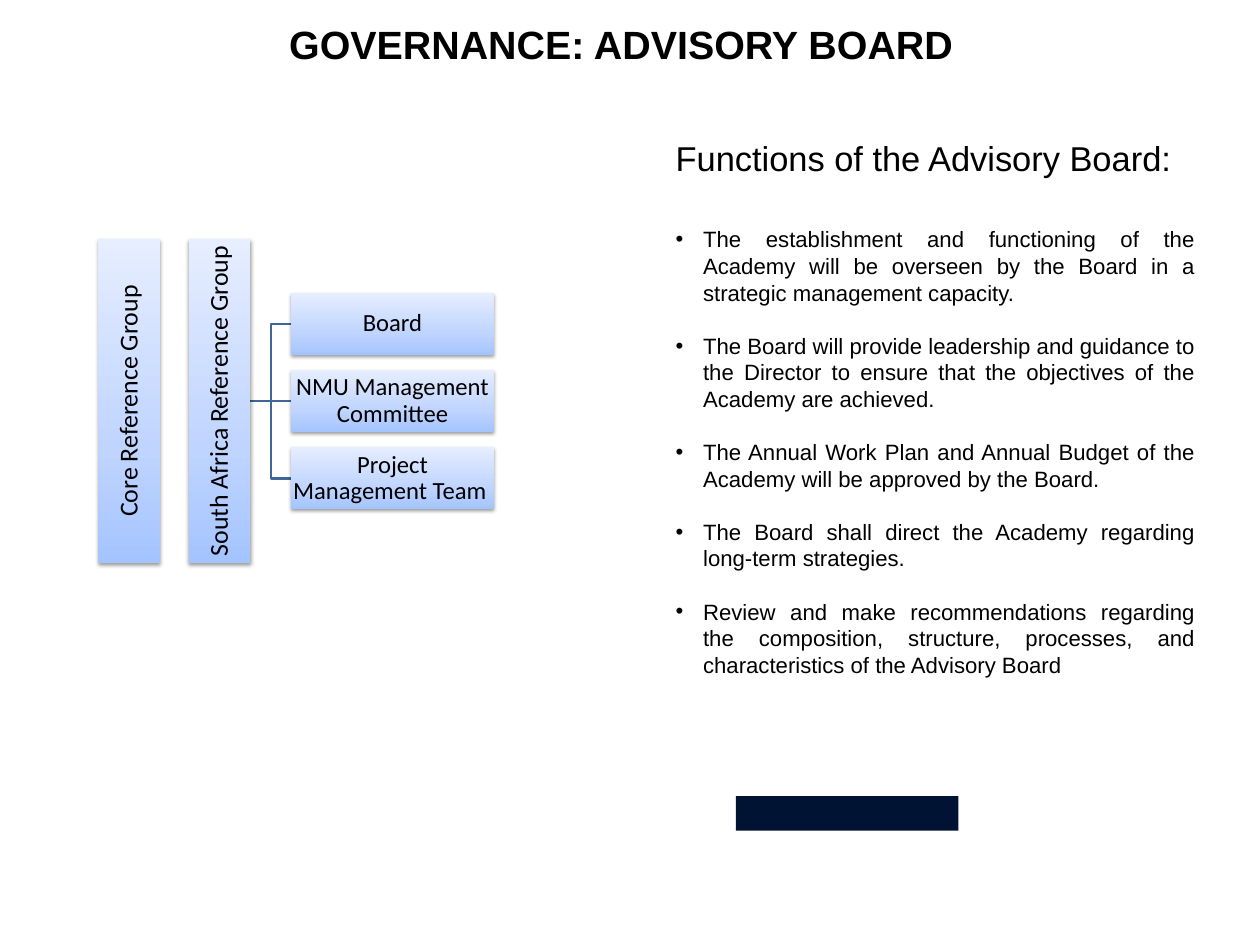
import pptx
import pptx.dml.color
import pptx.enum.shapes
import pptx.enum.text
import pptx.oxml
import pptx.oxml.ns
import pptx.util

Pt = pptx.util.Pt
ALIGN = pptx.enum.text.PP_ALIGN
ANCHOR = pptx.enum.text.MSO_ANCHOR
SHAPE = pptx.enum.shapes.MSO_SHAPE
CONNECTOR = pptx.enum.shapes.MSO_CONNECTOR
DRAWING_NS = pptx.oxml.ns.nsdecls("a")
LEADING = 1.2  # line height as a multiple of the font size

REFERENCE_GROUPS = ["Core Reference Group", "South Africa Reference Group"]
BODIES = ["Board", "NMU Management Committee", "Project Management Team "]
FUNCTIONS = [
    "The establishment and functioning of the Academy will be overseen by the Board in a "
    "strategic management capacity.",
    "The Board will provide leadership and guidance to the Director to ensure that the "
    "objectives of the Academy are achieved.",
    "The Annual Work Plan and Annual Budget of the Academy will be approved by the Board.",
    "The Board shall direct the Academy regarding long-term strategies.",
    "Review and make recommendations regarding the composition, structure, processes, and "
    "characteristics of the Advisory Board",
]


def color(hex_string):
    return pptx.dml.color.RGBColor.from_string(hex_string)


def add_text(paragraph, text, size, font="Arial", bold=False, align=ALIGN.LEFT):
    paragraph.alignment = align
    run = paragraph.add_run()
    run.text = text
    run.font.name = font
    run.font.size = Pt(size)
    run.font.bold = bold
    run.font.color.rgb = color("000000")


def add_text_box(slide, left, top, width, height):
    frame = slide.shapes.add_textbox(Pt(left), Pt(top), Pt(width), Pt(height)).text_frame
    frame.word_wrap = True
    return frame


def add_bullet(paragraph, indent):
    properties = paragraph._p.get_or_add_pPr()
    properties.set("marL", str(Pt(indent)))
    properties.set("indent", str(-Pt(indent)))
    for xml in (f'<a:buFont {DRAWING_NS} typeface="Arial"/>', f'<a:buChar {DRAWING_NS} char="•"/>'):
        properties.append(pptx.oxml.parse_xml(xml))


def style_panel(shape):
    """Blue gradient rising from dark to light, with a soft shadow below."""
    shape.line.fill.background()
    stops = "".join(
        f'<a:gs pos="{position}000"><a:srgbClr val="{shade}"/></a:gs>'
        for position, shade in [(0, "A4C4FF"), (35, "BFD4FF"), (100, "E6EEFF")]
    )
    gradient = pptx.oxml.parse_xml(
        f'<a:gradFill {DRAWING_NS} rotWithShape="0"><a:gsLst>{stops}</a:gsLst>'
        '<a:lin ang="16200000" scaled="0"/></a:gradFill>'
    )
    # An upright gradient needs a quarter turn in a panel that is itself turned
    properties = shape._element.spPr
    properties.find(pptx.oxml.ns.qn("a:ln")).addprevious(gradient)
    shape.shadow.inherit = False
    properties.find(pptx.oxml.ns.qn("a:effectLst")).append(pptx.oxml.parse_xml(
        f'<a:outerShdw {DRAWING_NS} blurRad="{Pt(3.1)}" dist="{Pt(1.6)}" dir="5400000" '
        'rotWithShape="0"><a:srgbClr val="000000"><a:alpha val="38000"/></a:srgbClr></a:outerShdw>'
    ))


def add_panel(slide, left, top, width, height, text, size, upright=False):
    shape = slide.shapes.add_shape(SHAPE.RECTANGLE, Pt(left), Pt(top), Pt(width), Pt(height))
    style_panel(shape)
    frame = shape.text_frame
    frame.word_wrap = True
    frame.vertical_anchor = ANCHOR.MIDDLE
    frame.margin_left = frame.margin_right = frame.margin_top = frame.margin_bottom = Pt(1)
    if upright:
        frame._txBody.bodyPr.set("vert", "vert270")
    paragraph = frame.paragraphs[0]
    paragraph.line_spacing = 0.9
    add_text(paragraph, text, size, "Calibri", align=ALIGN.CENTER)


def add_link(slide, kind, start, end):
    connector = slide.shapes.add_connector(kind, *(Pt(value) for value in start + end))
    connector.line.color.rgb = color("3F6797")
    connector.line.width = Pt(2)
    connector._element.spPr.append(pptx.oxml.parse_xml(f"<a:effectLst {DRAWING_NS}/>"))


def add_title(slide, left, top, width, height):
    paragraph = add_text_box(slide, left, top, width, height).paragraphs[0]
    paragraph.line_spacing = Pt(32 * LEADING)
    add_text(paragraph, "GOVERNANCE: ADVISORY BOARD", 32, bold=True, align=ALIGN.CENTER)


def add_governance_chart(slide, left, top, width, height):
    thickness, group_pitch, body_pitch = 50.2, 73.4, 62.7
    body_left = left + 157
    middle = top + height / 2

    # Links from the second reference group to each body
    start = (left + group_pitch + thickness, middle)
    centers = [middle + (index - 1) * body_pitch for index in range(len(BODIES))]
    for center in centers:
        kind = CONNECTOR.STRAIGHT if center == middle else CONNECTOR.ELBOW
        add_link(slide, kind, start, (body_left, center))

    # Upright reference groups, then the stacked bodies
    for index, name in enumerate(REFERENCE_GROUPS):
        add_panel(slide, left + index * group_pitch, top, thickness, height, name, 21, upright=True)
    for center, name in zip(centers, BODIES):
        add_panel(slide, body_left, center - thickness / 2, left + width - body_left,
                  thickness, name, 20)


def add_functions(slide, left, top, width, height):
    frame = add_text_box(slide, left, top, width, height)
    heading = frame.paragraphs[0]
    heading.line_spacing = Pt(28 * LEADING)
    add_text(heading, "Functions of the Advisory Board:", 28)
    for index, text in enumerate(FUNCTIONS):
        paragraph = frame.add_paragraph()
        paragraph.line_spacing = Pt(18 * LEADING)
        paragraph.space_before = Pt((18 if index else 32) * LEADING)
        add_bullet(paragraph, 22.3)
        add_text(paragraph, text, 18, align=ALIGN.JUSTIFY)


def add_logo_block(slide, left, top, width, height):
    shape = slide.shapes.add_shape(SHAPE.RECTANGLE, Pt(left), Pt(top), Pt(width), Pt(height))
    shape.shadow.inherit = False
    shape.fill.solid()
    shape.fill.fore_color.rgb = color("001332")
    shape.line.fill.background()


def main():
    presentation = pptx.Presentation()
    presentation.slide_width, presentation.slide_height = Pt(1024), Pt(768)
    slide = presentation.slides.add_slide(presentation.slide_layouts[6])
    add_logo_block(slide, 598, 647, 181, 28)
    add_governance_chart(slide, 79.9, 194.2, 321.2, 263.6)
    add_title(slide, 44, 13, 922, 59)
    add_functions(slide, 542, 108, 436, 492)
    presentation.save("out.pptx")


if __name__ == "__main__":
    main()
